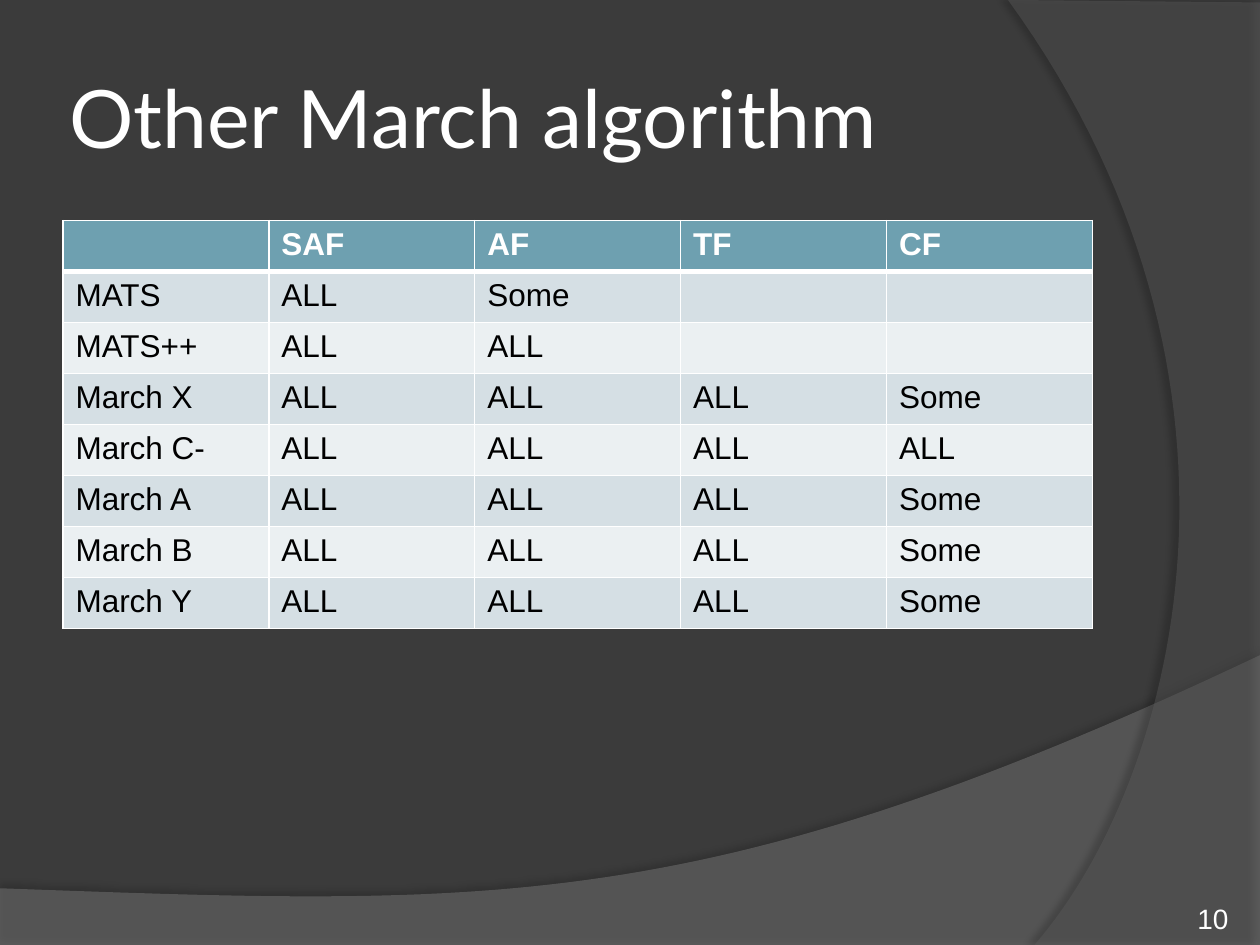
import lxml.etree
import pptx
import pptx.dml.color
import pptx.enum.text
import pptx.oxml.ns
import pptx.util
from pptx.util import Inches

RGBColor = pptx.dml.color.RGBColor
BACKGROUND = RGBColor(0x3B, 0x3B, 0x3B)
LOWER_WAVE = RGBColor(0x7F, 0x7F, 0x7F)
RIGHT_WAVE = RGBColor(0x5E, 0x5E, 0x5E)
HEADER = RGBColor(0x6E, 0xA0, 0xB0)
BAND_DARK = RGBColor(0xD5, 0xDF, 0xE4)
BAND_LIGHT = RGBColor(0xEB, 0xF0, 0xF2)
WHITE = RGBColor(0xFF, 0xFF, 0xFF)
BLACK = RGBColor(0, 0, 0)
qn = pptx.oxml.ns.qn


def add_run(paragraph, text, font, size, color, bold=False):
    run = paragraph.add_run()
    run.text = text
    run.font.name = font
    run.font.size = pptx.util.Pt(size)
    run.font.color.rgb = color
    run.font.bold = bold


def curve_points(start, control_1, control_2, end, steps=60):
    points = []
    for step in range(1, steps + 1):
        t = step / steps
        weights = ((1 - t) ** 3, 3 * t * (1 - t) ** 2, 3 * t * t * (1 - t), t ** 3)
        corners = (start, control_1, control_2, end)
        points.append(tuple(sum(w * c[axis] for w, c in zip(weights, corners))
                            for axis in (0, 1)))
    return points


presentation = pptx.Presentation()
presentation.slide_width = Inches(10)
presentation.slide_height = Inches(7.5)
slide = presentation.slides.add_slide(presentation.slide_layouts[6])
slide.background.fill.solid()
slide.background.fill.fore_color.rgb = BACKGROUND

# Background waves: outline, colour, opacity %, shadow opacity %, distance, angle
lower_outline = [(0, 7.05), (0, 7.51), (10, 7.51), (10, 5.2)]
lower_outline += curve_points((10, 5.2), (5.59, 7.29), (3.91, 7.19), (0, 7.05))
right_outline = [(10, 0.02), (10, 7.5), (8.21, 7.5)]
right_outline += curve_points((8.21, 7.5), (9.35, 6.19), (10.18, 3), (8, 0))
waves = [
    (lower_outline, LOWER_WAVE, 45, 35, 3.5, 270),
    (right_outline, RIGHT_WAVE, 40, 45, 4, 180),
]
for outline, color, opacity, shadow_opacity, distance, angle in waves:
    points = [(Inches(x), Inches(y)) for x, y in outline]
    builder = slide.shapes.build_freeform(*points[0])
    builder.add_line_segments(points[1:], close=True)
    shape = builder.convert_to_shape()
    shape.line.fill.background()
    shape.fill.solid()
    shape.fill.fore_color.rgb = color
    fill_color = shape.fill._xPr.find(qn("a:solidFill"))[0]
    lxml.etree.SubElement(fill_color, qn("a:alpha"), val=str(opacity * 1000))
    shape.shadow.inherit = False
    effects = shape._element.spPr.find(qn("a:effectLst"))
    shadow = lxml.etree.SubElement(
        effects, qn("a:outerShdw"), blurRad=str(pptx.util.Pt(4)),
        dist=str(pptx.util.Pt(distance)), dir=str(angle * 60000),
        algn="ctr", rotWithShape="0")
    shadow_color = lxml.etree.SubElement(shadow, qn("a:srgbClr"), val=str(BLACK))
    lxml.etree.SubElement(shadow_color, qn("a:alpha"), val=str(shadow_opacity * 1000))

# Title and slide number
ANCHOR = pptx.enum.text.MSO_ANCHOR
ALIGN = pptx.enum.text.PP_ALIGN
labels = [
    ("Other March algorithm", (0.5, 0.3, 8.17, 1.25), 0.05, ANCHOR.MIDDLE, ALIGN.LEFT, "Lato", 46),
    ("10", (8.92, 7.02, 0.83, 0.4), 0, ANCHOR.BOTTOM, ALIGN.RIGHT, "Arial", 16),
]
for text, box, inset, anchor, alignment, font, size in labels:
    frame = slide.shapes.add_textbox(*map(Inches, box)).text_frame
    frame.word_wrap = True
    frame.vertical_anchor = anchor
    frame.margin_left = frame.margin_right = Inches(inset)
    frame.margin_top = frame.margin_bottom = Inches(inset)
    frame.paragraphs[0].alignment = alignment
    add_run(frame.paragraphs[0], text, font, size, WHITE)

# Fault coverage table
rows = [
    ("", "SAF", "AF", "TF", "CF"),
    ("MATS", "ALL", "Some", "", ""),
    ("MATS++", "ALL", "ALL", "", ""),
    ("March X", "ALL", "ALL", "ALL", "Some"),
    ("March C-", "ALL", "ALL", "ALL", "ALL"),
    ("March A", "ALL", "ALL", "ALL", "Some"),
    ("March B", "ALL", "ALL", "ALL", "Some"),
    ("March Y", "ALL", "ALL", "ALL", "Some"),
]
table = slide.shapes.add_table(
    len(rows), len(rows[0]), Inches(0.5), Inches(1.75), Inches(8.17), Inches(3.24)).table
for row_index, row in enumerate(rows):
    is_header = row_index == 0
    band = HEADER if is_header else (BAND_LIGHT, BAND_DARK)[row_index % 2]
    for column_index, text in enumerate(row):
        cell = table.cell(row_index, column_index)
        properties = cell._tc.get_or_add_tcPr()
        for side in ("lnL", "lnR", "lnT", "lnB"):
            below_header = (row_index, side) in ((0, "lnB"), (1, "lnT"))
            width = pptx.util.Pt(3 if below_header else 1)
            border = lxml.etree.SubElement(properties, qn("a:" + side), w=str(width))
            border_fill = lxml.etree.SubElement(border, qn("a:solidFill"))
            lxml.etree.SubElement(border_fill, qn("a:srgbClr"), val=str(WHITE))
        cell.fill.solid()
        cell.fill.fore_color.rgb = band
        if text:
            add_run(cell.text_frame.paragraphs[0], text, "Arial", 18,
                    WHITE if is_header else BLACK, is_header)

presentation.save("out.pptx")
